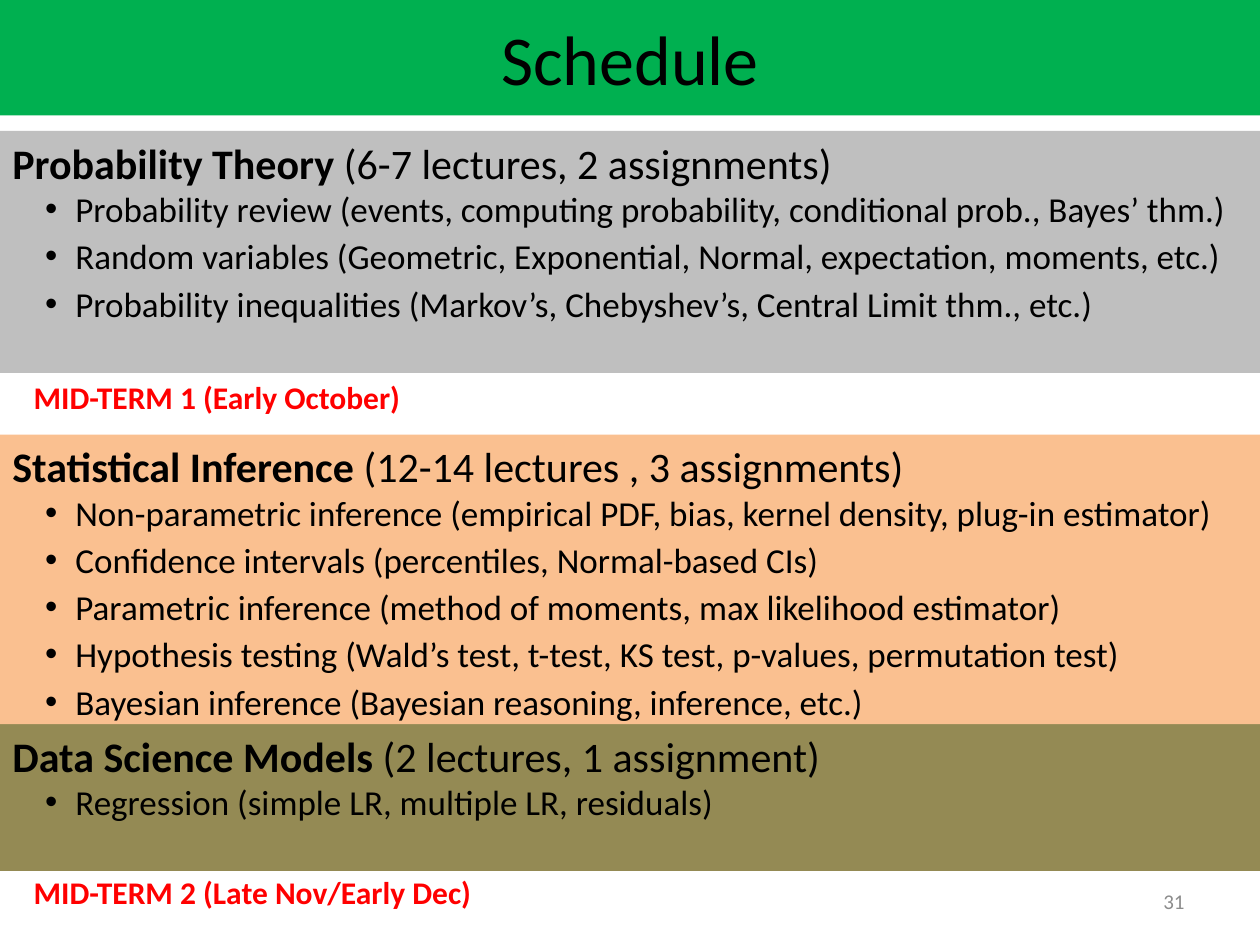
from lxml import etree
from pptx import Presentation
from pptx.dml.color import RGBColor
from pptx.enum.shapes import MSO_SHAPE
from pptx.enum.text import MSO_ANCHOR, PP_ALIGN
from pptx.oxml.ns import qn
from pptx.util import Cm, Pt

RECTANGLE = MSO_SHAPE.RECTANGLE
TOP, MIDDLE = MSO_ANCHOR.TOP, MSO_ANCHOR.MIDDLE
LEFT, CENTER, RIGHT = PP_ALIGN.LEFT, PP_ALIGN.CENTER, PP_ALIGN.RIGHT

SLIDE_WIDTH, SLIDE_HEIGHT = 25.4, 19.05
COLORS = {
    "title": "00B050",
    "probability": "BFBFBF",
    "inference": "FAC090",
    "models": "948A54",
    "text": "000000",
    "exam": "FF0000",
    "number": "8C8C8C",
}

SECTIONS = [
    ("probability", 2.64, 4.88, "Probability Theory ", "(6-7 lectures, 2 assignments)", [
        "Probability review (events, computing probability, conditional prob., Bayes’ thm.)",
        "Random variables (Geometric, Exponential, Normal, expectation, moments, etc.)",
        "Probability inequalities (Markov’s, Chebyshev’s, Central Limit thm., etc.)",
    ]),
    ("inference", 8.76, 5.84, "Statistical Inference", " (12-14 lectures , 3 assignments)", [
        "Non-parametric inference (empirical PDF, bias, kernel density, plug-in estimator)",
        "Confidence intervals (percentiles, Normal-based CIs)",
        "Parametric inference (method of moments, max likelihood estimator)",
        "Hypothesis testing (Wald’s test, t-test, KS test, p-values, permutation test)",
        "Bayesian inference (Bayesian reasoning, inference, etc.)",
    ]),
    ("models", 14.6, 2.96, "Data Science Models ", "(2 lectures, 1 assignment)", [
        "Regression (simple LR, multiple LR, residuals)",
    ]),
]
EXAMS = [
    (7.5, 8.05, "MID-TERM 1 (Early October)"),
    (17.48, 10.8, "MID-TERM 2 (Late Nov/Early Dec)"),
]


class ScheduleSlide:
    font = "Calibri"

    def __init__(self, presentation):
        self.slide = presentation.slides.add_slide(presentation.slide_layouts[6])

    def add_run(self, paragraph, text, size, color="text", bold=False):
        run = paragraph.add_run()
        run.text = text
        run.font.name = self.font
        run.font.size = Pt(size)
        run.font.bold = bold
        run.font.color.rgb = RGBColor.from_string(COLORS[color])

    def add_band(self, color, top, height, anchor, alignment):
        shape = self.slide.shapes.add_shape(
            RECTANGLE, Cm(0), Cm(top), Cm(SLIDE_WIDTH), Cm(height))
        shape.shadow.inherit = False
        shape.fill.solid()
        shape.fill.fore_color.rgb = RGBColor.from_string(COLORS[color])
        shape.line.fill.background()
        shape.text_frame.word_wrap = True
        shape.text_frame.vertical_anchor = anchor
        paragraph = shape.text_frame.paragraphs[0]
        paragraph.alignment = alignment
        return shape.text_frame

    def add_title(self, text, height):
        text_frame = self.add_band("title", 0, height, MIDDLE, CENTER)
        self.add_run(text_frame.paragraphs[0], text, 40)

    def add_bullet(self, text_frame, text):
        paragraph = text_frame.add_paragraph()
        paragraph.level = 1
        paragraph.alignment = LEFT
        paragraph.space_after = Pt(3)
        properties = paragraph._p.get_or_add_pPr()
        properties.set("marL", str(Cm(1.27)))
        properties.set("indent", str(Cm(-0.61)))
        bullet_font = etree.SubElement(properties, qn("a:buFont"))
        bullet_font.set("typeface", "Arial")
        etree.SubElement(properties, qn("a:buChar")).set("char", "•")
        self.add_run(paragraph, text, 20)

    def add_section(self, color, top, height, heading, workload, topics):
        text_frame = self.add_band(color, top, height, TOP, LEFT)
        paragraph = text_frame.paragraphs[0]
        self.add_run(paragraph, heading, 24, bold=True)
        self.add_run(paragraph, workload, 24)
        for topic in topics:
            self.add_bullet(text_frame, topic)

    def add_label(self, left, top, width, text, size, color,
                  bold=False, alignment=LEFT, anchor=TOP):
        shape = self.slide.shapes.add_textbox(Cm(left), Cm(top), Cm(width), Cm(1.02))
        shape.text_frame.word_wrap = True
        shape.text_frame.vertical_anchor = anchor
        paragraph = shape.text_frame.paragraphs[0]
        paragraph.alignment = alignment
        self.add_run(paragraph, text, size, color, bold)


def main():
    presentation = Presentation()
    presentation.slide_width = Cm(SLIDE_WIDTH)
    presentation.slide_height = Cm(SLIDE_HEIGHT)
    schedule = ScheduleSlide(presentation)
    schedule.add_title("Schedule", 2.33)
    schedule.add_label(18.2, 17.65, 5.93, "31", 12, "number",
                       alignment=RIGHT, anchor=MIDDLE)
    for section in reversed(SECTIONS):
        schedule.add_section(*section)
    for top, width, text in EXAMS:
        schedule.add_label(0.43, top, width, text, 18, "exam", bold=True)
    presentation.save("out.pptx")


if __name__ == "__main__":
    main()
